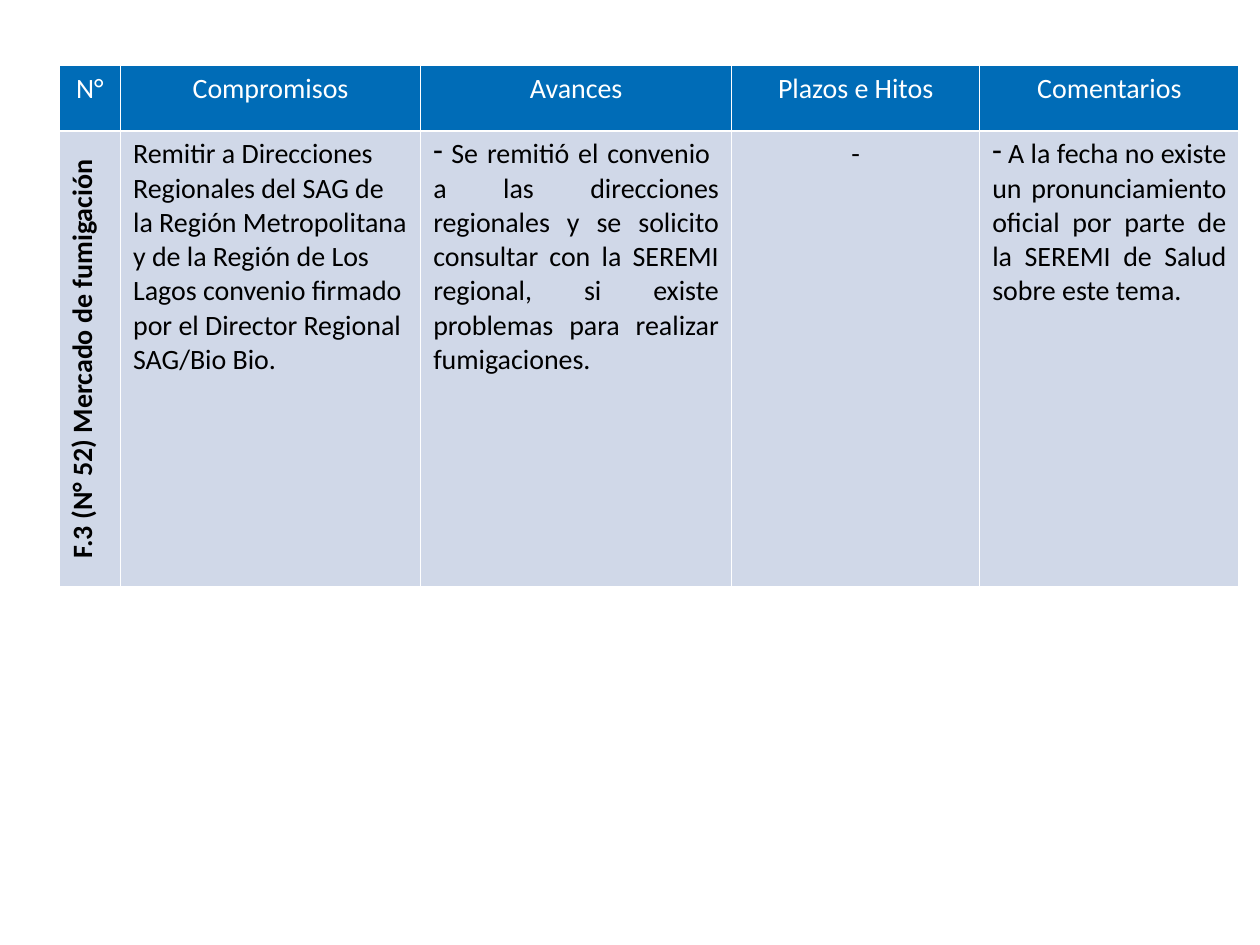
import dataclasses

import pptx
import pptx.dml.color
import pptx.enum.text
import pptx.oxml.ns
import pptx.util
from lxml import etree

Cm = pptx.util.Cm
Pt = pptx.util.Pt
Align = pptx.enum.text.PP_ALIGN
Color = pptx.dml.color.RGBColor.from_string


@dataclasses.dataclass(frozen=True)
class Theme:
    font: str = "Calibri"
    size: int = 16
    head: str = "006CB7"
    body: str = "D0D8E8"
    light: str = "FFFFFF"
    dark: str = "000000"
    rule: int = 1


THEME = Theme()
COLS = (1.24, 6.05, 6.27, 5, 5.23)
ROWS = (1.32, 9.19)
HEADS = ("N°", "Compromisos", "Avances", "Plazos e Hitos", "Comentarios")
TOPIC = "F.3 (N° 52) Mercado de fumigación"
TASK = (
    "Remitir a Direcciones Regionales del SAG de la Región Metropolitana "
    "y de la Región de Los Lagos convenio firmado por el Director Regional "
    "SAG/Bio Bio."
)
STATUS = (
    " Se remitió el convenio  a las direcciones regionales y se solicito "
    "consultar con la SEREMI regional, si existe problemas para realizar "
    "fumigaciones."
)
REMARK = (
    " A la fecha no existe un pronunciamiento oficial por parte de la "
    "SEREMI de Salud sobre este tema."
)


def add_node(parent, tag, **attrs):
    return etree.SubElement(parent, pptx.oxml.ns.qn(tag), attrs)


def add_rules(cell):
    """Draw a thin line on all four sides; call before the fill is set."""
    props = cell._tc.get_or_add_tcPr()
    for side in "LRTB":
        line = add_node(props, f"a:ln{side}", w=str(Pt(THEME.rule)))
        add_node(add_node(line, "a:solidFill"), "a:srgbClr", val=THEME.light)


def add_dash(para):
    """Give the paragraph a dash as its bullet."""
    props = para._p.get_or_add_pPr()
    props.set("marL", "0")
    props.set("indent", "0")
    add_node(props, "a:buFontTx")
    add_node(props, "a:buChar", char="-")


def fill_cell(cell, text, fill, ink, align=Align.CENTER, bold=False):
    add_rules(cell)
    cell.fill.solid()
    cell.fill.fore_color.rgb = Color(fill)
    cell.text = text
    para = cell.text_frame.paragraphs[0]
    para.alignment = align
    font = para.font
    font.name, font.size, font.bold = THEME.font, Pt(THEME.size), bold
    font.color.rgb = Color(ink)
    return para


def add_grid(slide):
    frame = slide.shapes.add_table(
        len(ROWS), len(COLS), Cm(1.19), Cm(1.32), Cm(sum(COLS)), Cm(sum(ROWS))
    )
    table = frame.table
    for col, width in zip(table.columns, COLS):
        col.width = Cm(width)
    for row, height in zip(table.rows, ROWS):
        row.height = Cm(height)
    return table


def fill_head(table):
    for col, text in enumerate(HEADS):
        fill_cell(table.cell(0, col), text, THEME.head, THEME.light)


def fill_body(table):
    items = (
        (TOPIC, Align.CENTER),
        (TASK, Align.LEFT),
        (STATUS, Align.JUSTIFY),
        ("-", Align.CENTER),
        (REMARK, Align.JUSTIFY),
    )
    for col, (text, align) in enumerate(items):
        cell = table.cell(1, col)
        para = fill_cell(cell, text, THEME.body, THEME.dark, align, col == 0)
        if align == Align.JUSTIFY:
            add_dash(para)
    table.cell(1, 0)._tc.get_or_add_tcPr().set("vert", "vert270")


def main():
    deck = pptx.Presentation()
    deck.slide_width, deck.slide_height = Cm(25.4), Cm(19.05)
    slide = deck.slides.add_slide(deck.slide_layouts[6])
    table = add_grid(slide)
    fill_head(table)
    fill_body(table)
    deck.save("out.pptx")


if __name__ == "__main__":
    main()
